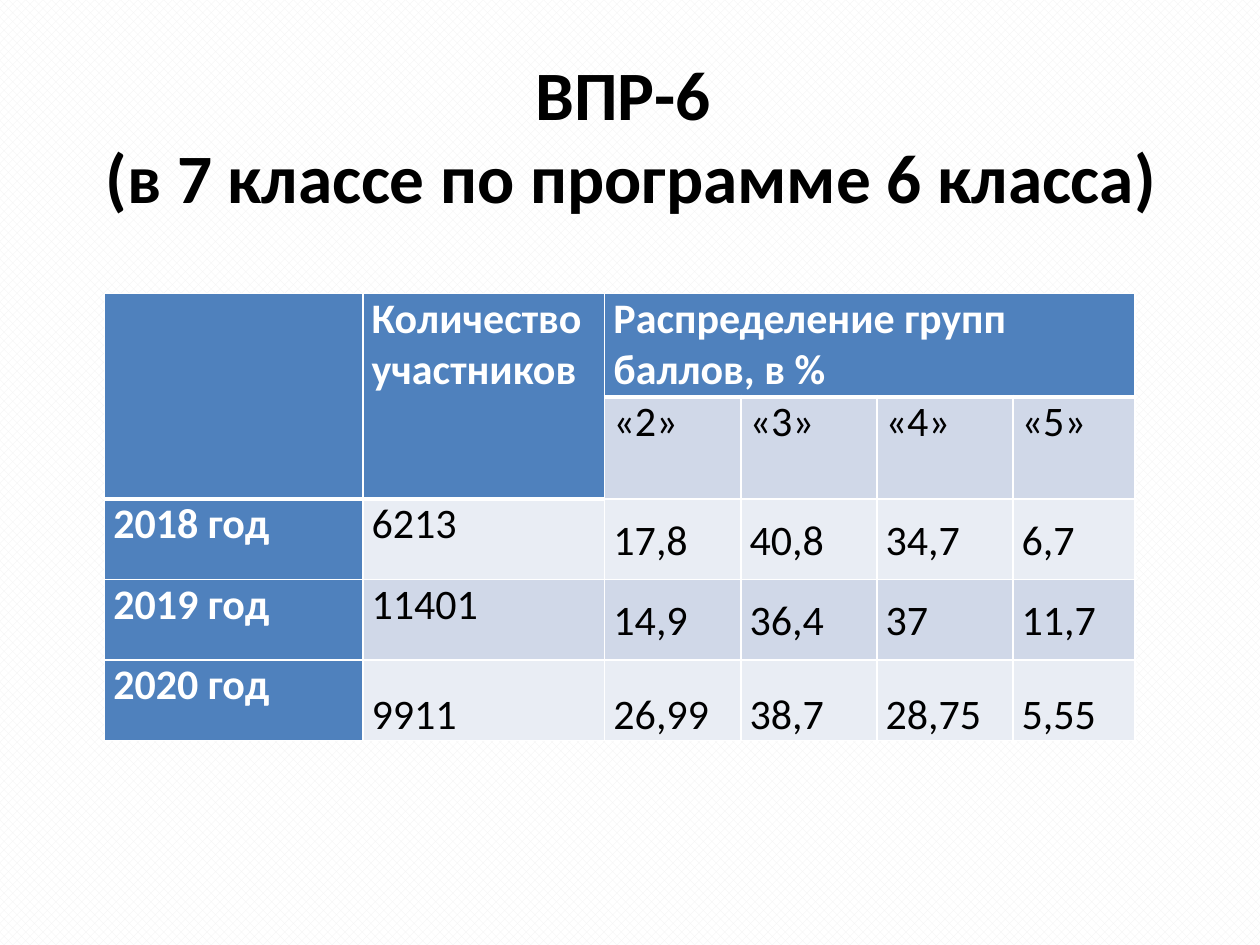
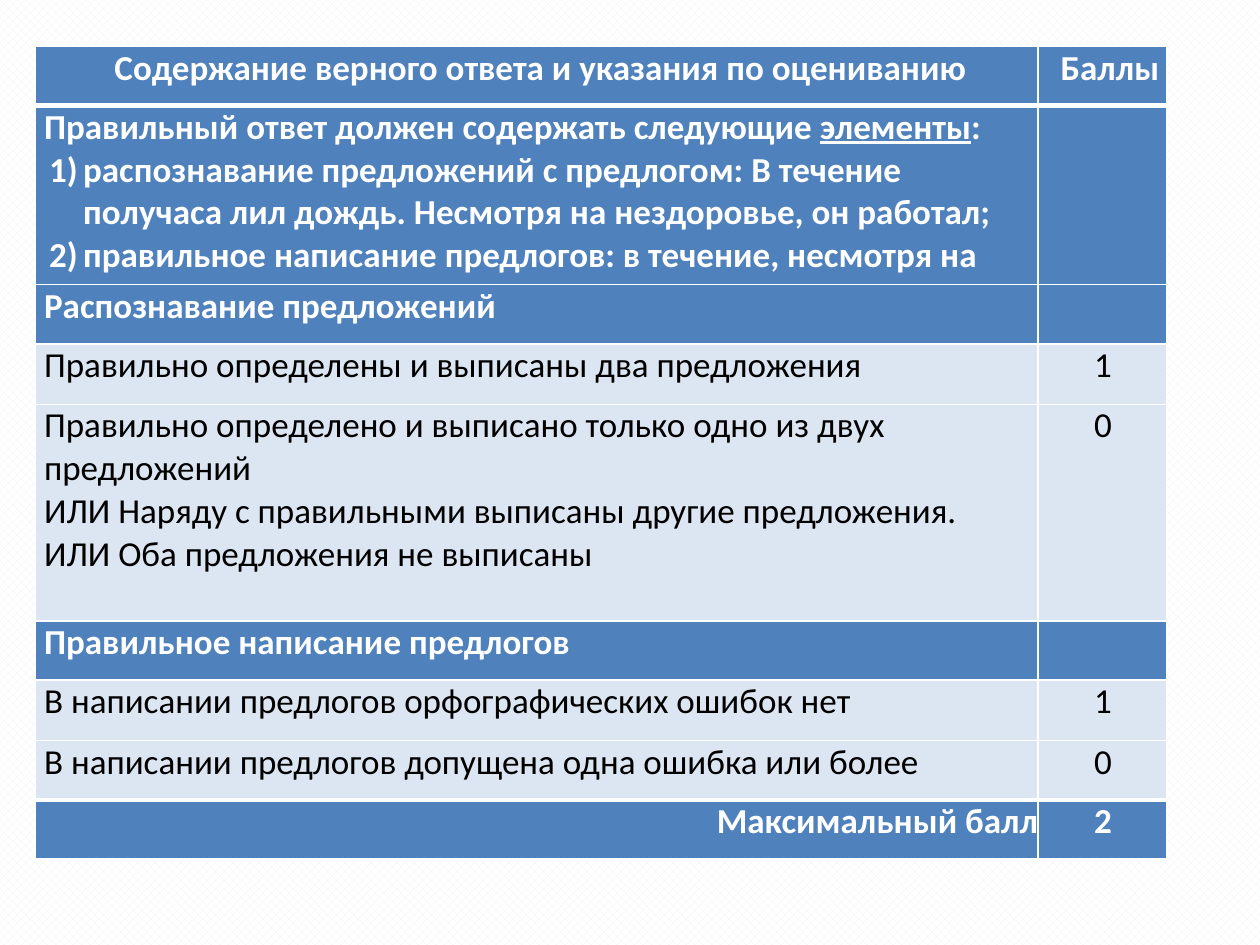
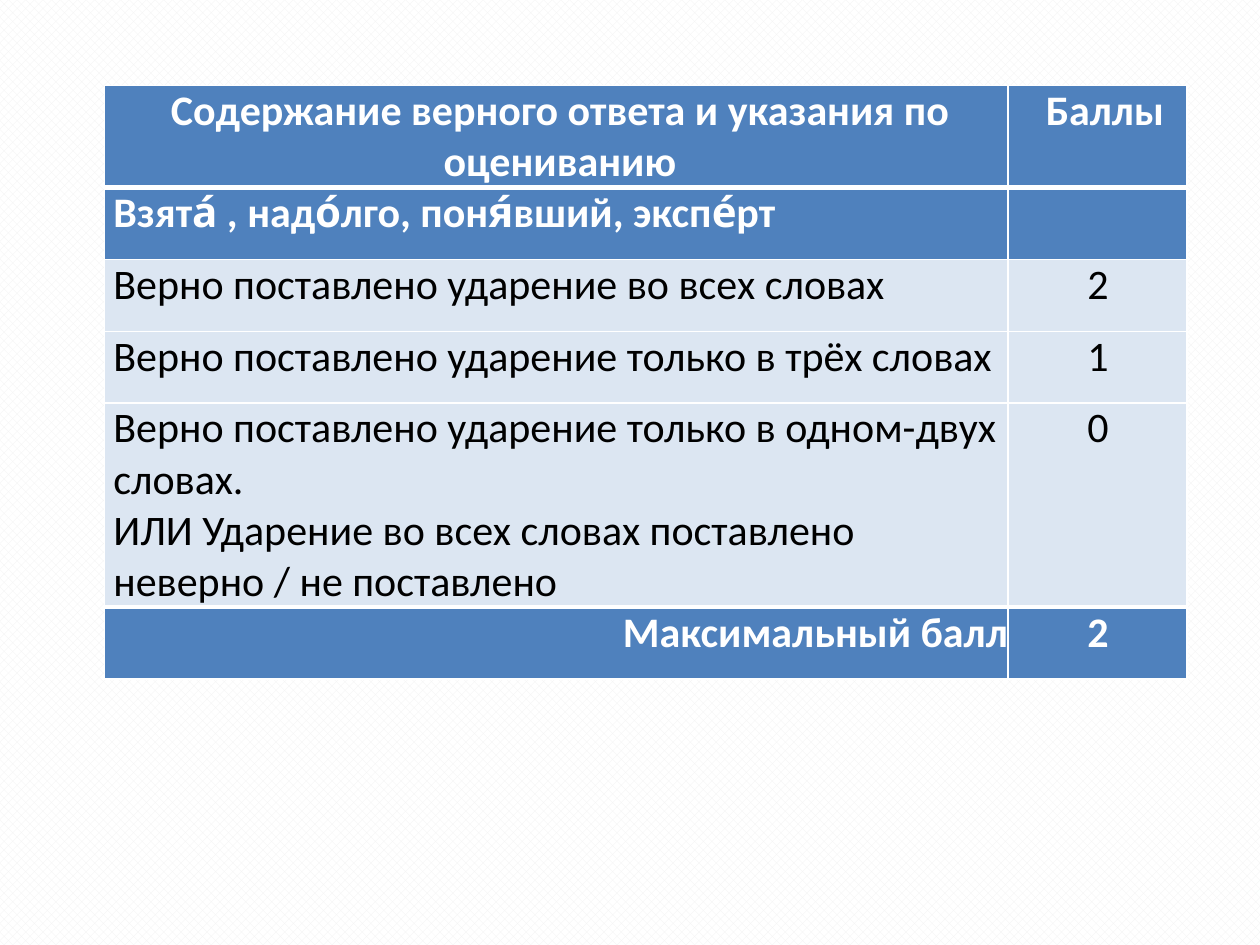
import dataclasses

import lxml.etree
import pptx
import pptx.dml.color
import pptx.enum.dml
import pptx.enum.text
import pptx.oxml.ns
import pptx.util

ALIGN = pptx.enum.text.PP_ALIGN
ANCHOR = pptx.enum.text.MSO_ANCHOR


@dataclasses.dataclass(frozen=True)
class Theme:
    """Colours, type sizes and line widths shared by all slides."""
    font: str = "Calibri"
    ink: str = "000000"
    white: str = "FFFFFF"
    weave: str = "F2F2F2"
    head: str = "4F81BD"
    dark: str = "D0D8E8"
    light: str = "E9EDF4"
    pale: str = "DCE6F2"
    title: float = 39.6
    large: float = 24
    small: float = 20
    thin: float = 1
    thick: float = 3


@dataclasses.dataclass
class Para:
    """One paragraph: pairs of text and underline, with its layout."""
    runs: list
    align: ALIGN = ALIGN.LEFT
    left: float = 0
    hang: float = 0
    before: float = 0
    line: float = None
    count: bool = False


@dataclasses.dataclass
class Box:
    """A region measured in grid units."""
    left: float
    top: float
    width: float
    height: float


THEME = Theme()
COLS, ROWS = 100, 75


def unit(count):
    """Turn grid units into a length."""
    return pptx.util.Inches(count * 10 / COLS)


def paint(color):
    """Turn a hex string into a colour."""
    return pptx.dml.color.RGBColor.from_string(color)


def add_run(para, text, size, color, bold, under=False):
    """Add one styled run."""
    run = para.add_run()
    run.text = text
    font = run.font
    font.name, font.size, font.bold = THEME.font, pptx.util.Pt(size), bold
    font.color.rgb = paint(color)
    if under:
        font.underline = True


def write(frame, paras, size, color, bold):
    """Fill a text frame with paragraphs."""
    for index, item in enumerate(paras):
        para = frame.add_paragraph() if index else frame.paragraphs[0]
        para.alignment = item.align
        para.space_before = pptx.util.Pt(item.before)
        if item.line:
            para.line_spacing = item.line
        props = para._p.get_or_add_pPr()
        props.set("marL", str(unit(item.left)))
        props.set("indent", str(unit(item.hang)))
        if item.count:
            lxml.etree.SubElement(
                props, pptx.oxml.ns.qn("a:buAutoNum"), type="arabicParenR")
        for text, under in item.runs:
            add_run(para, text, size, color, bold, under)


def add_edges(cell, top, bottom):
    """Draw the four white borders of a cell."""
    props = cell._tc.get_or_add_tcPr()
    widths = {"L": THEME.thin, "R": THEME.thin, "T": top, "B": bottom}
    for side, width in widths.items():
        line = lxml.etree.SubElement(
            props, pptx.oxml.ns.qn("a:ln" + side), w=str(pptx.util.Pt(width)))
        fill = lxml.etree.SubElement(line, pptx.oxml.ns.qn("a:solidFill"))
        lxml.etree.SubElement(
            fill, pptx.oxml.ns.qn("a:srgbClr"), val=THEME.white)


def add_grid(slide, box, cols, rows):
    """Add a plain table with the given column and row sizes."""
    table = slide.shapes.add_table(
        len(rows), len(cols), unit(box.left), unit(box.top),
        unit(box.width), unit(box.height)).table
    table.first_row = table.horz_banding = False
    for col, width in zip(table.columns, cols):
        col.width = unit(width)
    for row, height in zip(table.rows, rows):
        row.height = unit(height)
    return table


def fill_cell(table, row, col, paras, fill, size, pad, rules, anchor=ANCHOR.TOP):
    """Set borders, fill and text; rules lists cells with a thick lower edge."""
    cell = table.cell(row, col)
    if cell.is_spanned:
        return
    top, bottom = (THEME.thick if spot in rules else THEME.thin
                   for spot in ((row - 1, col), (row, col)))
    add_edges(cell, top, bottom)
    cell.fill.solid()
    cell.fill.fore_color.rgb = paint(fill)
    cell.vertical_anchor = anchor
    if paras:
        cell.margin_left = cell.margin_right = unit(pad)
        cell.margin_top = cell.margin_bottom = 0
        head = fill == THEME.head
        write(cell.text_frame, paras, size,
              THEME.white if head else THEME.ink, head)


def add_title(slide, box, lines):
    """Add a centred bold title broken into lines."""
    frame = slide.shapes.add_textbox(
        unit(box.left), unit(box.top), unit(box.width), unit(box.height)).text_frame
    frame.word_wrap = True
    frame.vertical_anchor = ANCHOR.MIDDLE
    para = frame.paragraphs[0]
    para.alignment = ALIGN.CENTER
    for index, line in enumerate(lines):
        if index:
            para.add_line_break()
        add_run(para, line, THEME.title, THEME.ink, True)


def add_results(slide, box, data):
    """Add the yearly results table under its two-row head."""
    cols = (20.5, 19.2, 10.8, 10.8, 10.8, 9.7)
    table = add_grid(slide, box, cols, (8.2, 8.1) + (6.4,) * 3)
    for first, last in (((0, 0), (1, 0)), ((0, 1), (1, 1)), ((0, 2), (0, 5))):
        table.cell(*first).merge(table.cell(*last))
    rules = {(0, col) for col in range(len(cols))} | {(1, 0), (1, 1)}
    final = len(data) - 1
    for row, texts in enumerate(data):
        for col, text in enumerate(texts):
            fill = THEME.dark if row % 2 else THEME.light
            if row == 0 or col == 0:
                fill = THEME.head
            anchor, line, align = ANCHOR.TOP, None, ALIGN.JUSTIFY
            if row == final and col > 0:
                anchor, line, align = ANCHOR.BOTTOM, 1.07, ALIGN.LEFT
            elif row > 1 and col > 1:
                anchor, line = ANCHOR.MIDDLE, 1.07
            elif (row, col) == (0, 2):
                align = ALIGN.LEFT
            paras = [Para([(text, False)], align, line=line)] if text else []
            fill_cell(table, row, col, paras, fill, THEME.large, 0.7,
                      rules, anchor)


def lines(*texts):
    """Make left-aligned rubric paragraphs."""
    return [Para([(text, False)], left=0.7, before=0 if index else 1.4)
            for index, text in enumerate(texts)]


def add_rubric(slide, box, cols, heights, size, body):
    """Add a scoring table: head, body rows and the top score."""
    table = add_grid(slide, box, cols, heights)
    head = Para([("Содержание верного ответа и указания по оцениванию", False)],
                ALIGN.CENTER, 0.6, before=1.4)
    total = Para([("Максимальный балл", False)], ALIGN.RIGHT, 0.7, before=1.4)
    rows = [([head], "Баллы"), *body, ([total], "2")]
    last = len(rows) - 1
    rules = {(row, col) for row in (0, last - 1) for col in (0, 1)}
    for row, (paras, score) in enumerate(rows):
        scored = score and 0 < row < last
        fill = THEME.pale if scored else THEME.head
        mark = Para([(score, False)], ALIGN.CENTER,
                    0.1 if row else 1.2, before=1.4)
        for col, part in enumerate((paras, [mark] if score else [])):
            fill_cell(table, row, col, part, fill, size, 0, rules)


def build_scores(slide):
    """Build the slide with results by year."""
    add_title(slide, Box(5.1, 4.4, 90, 12.5),
              ("ВПР-6 ", "(в 7 классе по программе 6 класса)"))
    add_results(slide, Box(8.3, 23.3, 81.8, 35.5), (
        ("", "Количество участников", "Распределение групп баллов, в %", "", "", ""),
        ("", "", "«2»", "«3»", "«4»", "«5»"),
        ("2018 год", "6213", "17,8", "40,8", "34,7", "6,7"),
        ("2019 год", "11401", "14,9", "36,4", "37", "11,7"),
        ("2020 год", "9911", "26,99", "38,7", "28,75", "5,55")))


def build_spelling(slide):
    """Build the rubric for prepositions."""
    answer = [Para([("Правильный ответ должен содержать следующие ", False),
                    ("элементы", True), (":", False)], left=0.7, before=1.4)]
    answer += [Para([(text, False)], left=3.8, hang=-2.7, count=True) for text in (
        "распознавание предложений с предлогом: В течение получаса лил дождь. "
        "Несмотря на нездоровье, он работал;",
        "правильное написание предлогов: в течение, несмотря на")]
    add_rubric(
        slide, Box(2.8, 3.7, 89.8, 64.5), (79.6, 10.2),
        (4.7, 14.2, 4.7, 4.8, 17.2, 4.7, 4.8, 4.7, 4.7), THEME.small, (
            (answer, ""),
            (lines("Распознавание предложений"), ""),
            (lines("Правильно определены и выписаны два предложения"), "1"),
            (lines("Правильно определено и выписано только одно из двух предложений",
                   "ИЛИ Наряду с правильными выписаны другие предложения.",
                   "ИЛИ Оба предложения не выписаны"), "0"),
            (lines("Правильное написание предлогов"), ""),
            (lines("В написании предлогов орфографических ошибок нет"), "1"),
            (lines("В написании предлогов допущена одна ошибка или более"), "0")))


def build_stress(slide):
    """Build the rubric for word stress."""
    add_rubric(
        slide, Box(8.3, 6.8, 85.9, 47.1), (71.7, 14.2),
        (8.1, 5.7, 5.7, 5.7, 16.2, 5.7), THEME.large, (
            (lines("Взята́ , надо́лго, поня́вший, экспе́рт"), ""),
            (lines("Верно поставлено ударение во всех словах"), "2"),
            (lines("Верно поставлено ударение только в трёх словах"), "1"),
            (lines("Верно поставлено ударение только в одном-двух словах.",
                   "ИЛИ Ударение во всех словах поставлено неверно / не поставлено"),
             "0")))


def weave(master):
    """Give every slide the fine patterned ground."""
    fill = master.background.fill
    fill.patterned()
    fill.pattern = pptx.enum.dml.MSO_PATTERN.PERCENT_50
    fill.fore_color.rgb = paint(THEME.weave)
    fill.back_color.rgb = paint(THEME.white)


def main():
    """Build and save the deck."""
    deck = pptx.Presentation()
    deck.slide_width, deck.slide_height = unit(COLS), unit(ROWS)
    weave(deck.slide_master)
    for build in (build_scores, build_spelling, build_stress):
        build(deck.slides.add_slide(deck.slide_layouts[6]))
    deck.save("out.pptx")


if __name__ == "__main__":
    main()
